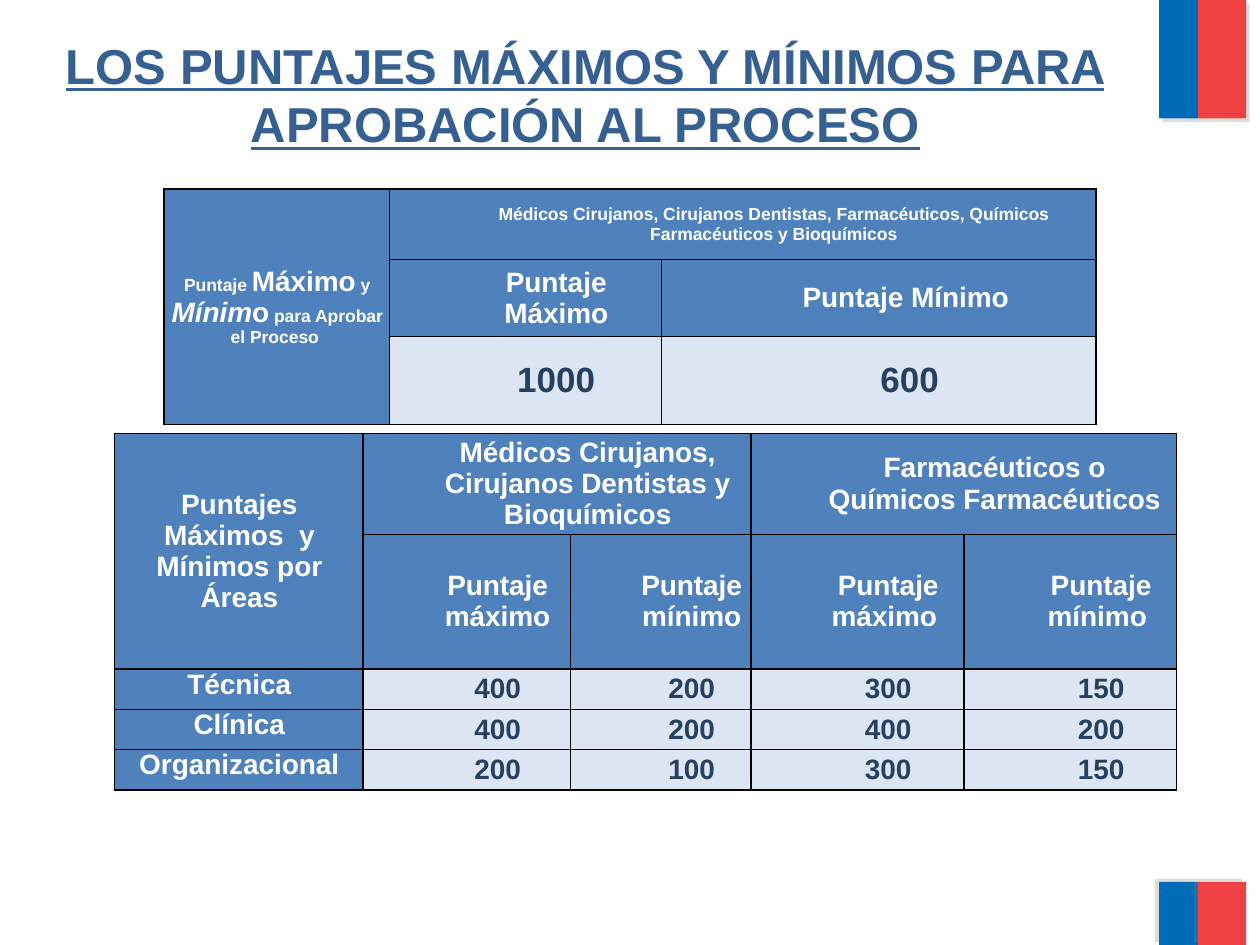
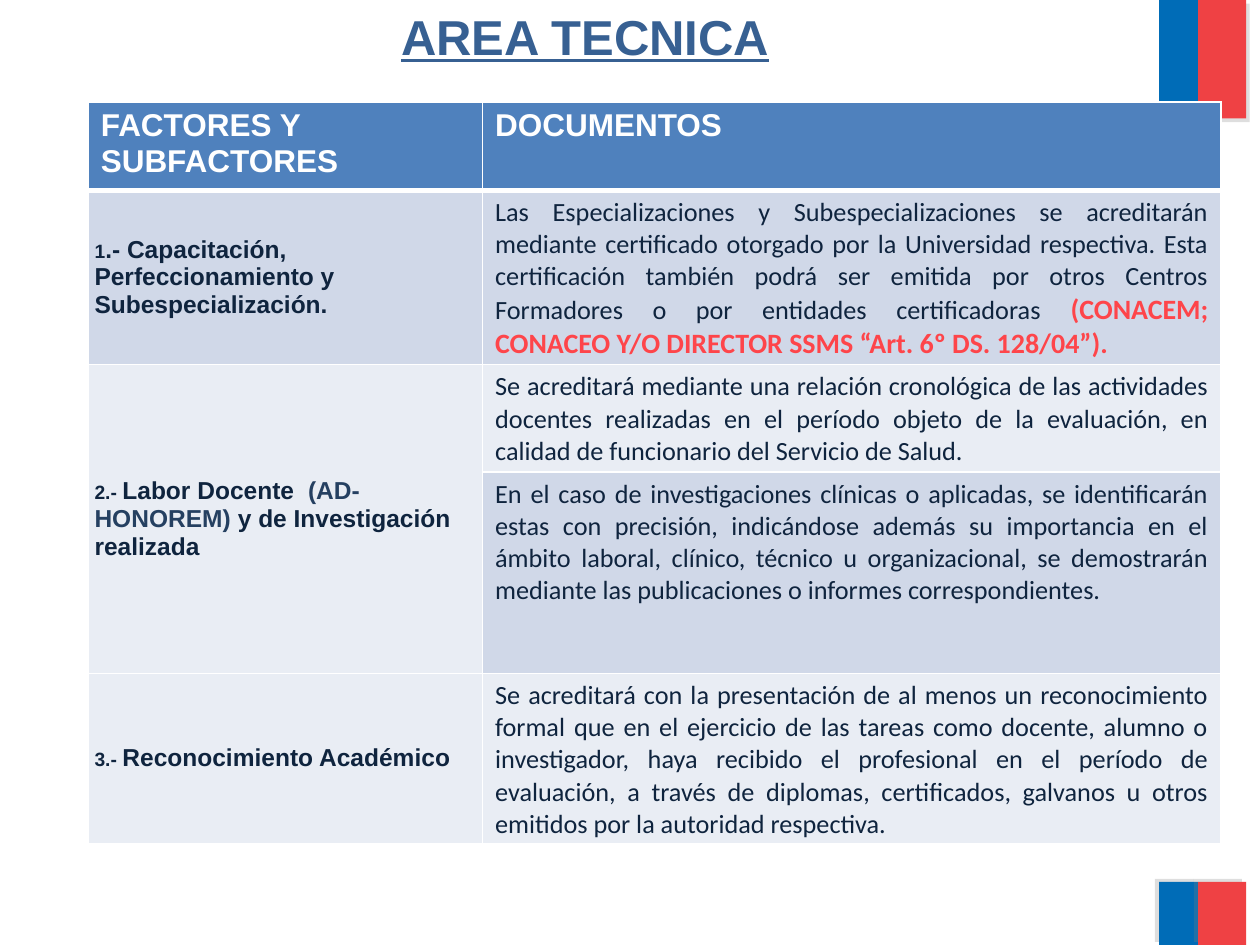
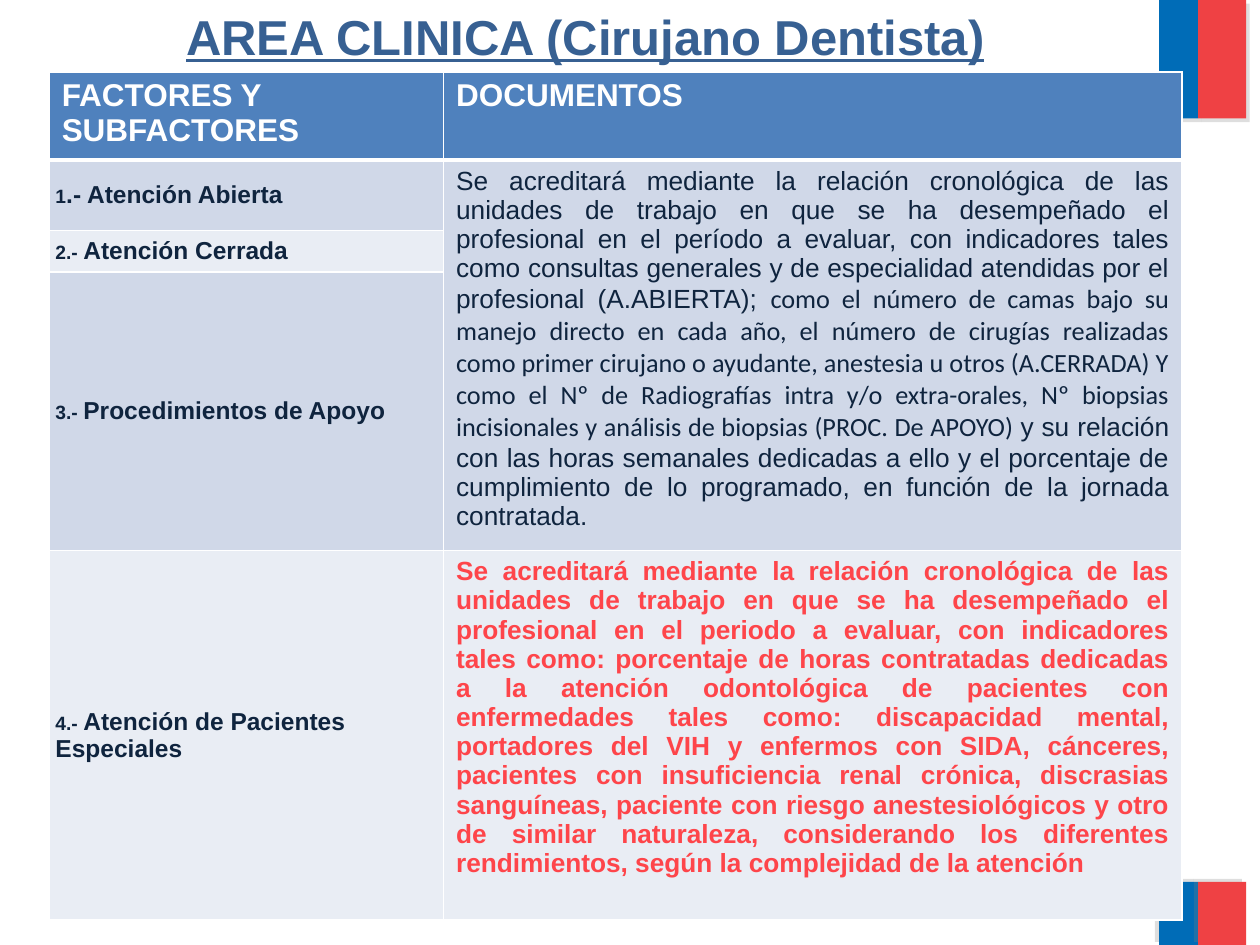
"""Build three slides on the scores and documents of an accreditation process."""
from lxml.etree import SubElement
from pptx import Presentation
from pptx.dml.color import RGBColor
from pptx.enum.shapes import MSO_SHAPE as Shape
from pptx.enum.text import MSO_ANCHOR as Anchor, MSO_AUTO_SIZE as AutoSize, PP_ALIGN as Align
from pptx.oxml.ns import qn
from pptx.util import Inches, Pt

BLUE, RED = "006CB7", "EF4144"
TITLE, HEADER, WHITE, BLACK = "376092", "4F81BD", "FFFFFF", "000000"
PALE, NAVY, INK, ALERT = "DCE6F2", "254061", "0F243E", "FE454A"
ROW_BANDS = ["E9EDF4", "D0D8E8"]

FLAG_BANDS = [
    (9.2, -0.01, 0.31, 0.95, BLUE, 45),
    (9.51, 0, 0.38, 0.94, RED, 45),
    (9.2, 7, 0.31, 0.5, BLUE, 215),
    (9.51, 7, 0.38, 0.5, RED, 215),
]

TIGHT = {"inset": (0.05, 0), "anchor": Anchor.MIDDLE}
SCORE = {**TIGHT, "align": Align.CENTER, "size": 16, "bold": True}
STYLES = {
    "group": {**SCORE, "fill": HEADER, "color": WHITE, "indent": 0.49},
    "corner": {**SCORE, "fill": HEADER, "color": WHITE, "indent": 0.01},
    "area": {**SCORE, "fill": HEADER, "color": WHITE, "indent": 0.01, "anchor": Anchor.TOP},
    "score": {**SCORE, "fill": PALE, "color": NAVY, "indent": 0.49},
    "heading": {"fill": HEADER, "color": WHITE, "size": 18, "bold": True},
    "factor": {**TIGHT, "color": INK, "size": 14, "bold": True},
    "document": {"color": INK, "size": 15, "align": Align.JUSTIFY},
}
SMALL, LARGE, NUMBER = {"size": 10}, {"size": 20}, {"size": 11}
CALIBRI = {"font": "Calibri"}

OVERALL = {
    "at": (1.3, 1.5), "cols": [1.79, 2.16, 3.45], "rows": [0.56, 0.61, 0.7],
    "cells": [
        (0, 0, "corner", [("Puntaje ", SMALL), "Máximo", (" y ", SMALL), ("Mínim", {"italic": True}),
                          "o", (" para Aprobar el Proceso ", SMALL)], (3, 1)),
        (0, 1, "group", [("Médicos Cirujanos, Cirujanos Dentistas, Farmacéuticos, Químicos "
                          "Farmacéuticos y Bioquímicos", SMALL)], (1, 2)),
        (1, 1, "group", ["Puntaje Máximo"]),
        (1, 2, "group", ["Puntaje Mínimo "]),
        (2, 1, "score", [("1000", LARGE)]),
        (2, 2, "score", [("600", LARGE)]),
    ],
}

AREA_SCORES = [
    ("Técnica", 400, 200, 300, 150),
    ("Clínica", 400, 200, 400, 200),
    ("Organizacional", 200, 100, 300, 150),
]
LIMITS = ["Puntaje máximo", "Puntaje mínimo", "Puntaje máximo ", "Puntaje mínimo "]
BY_AREA = {
    "at": (0.91, 3.44), "cols": [1.97, 1.65, 1.43, 1.69, 1.69], "rows": [0.8, 1.07] + [0.32] * 3,
    "cells": [
        (0, 0, "corner", ["Puntajes Máximos  y Mínimos por Áreas"], (2, 1)),
        (0, 1, "group", ["Médicos Cirujanos, Cirujanos Dentistas y Bioquímicos"], (1, 2)),
        (0, 3, "group", ["Farmacéuticos o Químicos Farmacéuticos"], (1, 2)),
        *((1, col, "group", [limit]) for col, limit in enumerate(LIMITS, 1)),
        *((row, col, "score" if col else "area", [str(entry)])
          for row, entries in enumerate(AREA_SCORES, 2) for col, entry in enumerate(entries)),
    ],
}

FACTOR_COLS = [3.13, 5.86]
FACTOR_HEADINGS = [
    (0, 0, "heading", ["FACTORES Y SUBFACTORES"]),
    (0, 1, "heading", ["DOCUMENTOS"]),
]
TECHNICAL = {
    "at": (0.7, 0.81), "cols": FACTOR_COLS, "rows": [0.69, 1.38, 0.85, 1.6, 1.35],
    "cells": FACTOR_HEADINGS + [
        (1, 0, "factor", [("1", NUMBER), ".- Capacitación, Perfeccionamiento y Subespecialización."]),
        (1, 1, "document", [
            ("Las Especializaciones y Subespecializaciones se acreditarán mediante certificado otorgado "
             "por la Universidad respectiva. Esta certificación también podrá ser emitida por otros "
             "Centros Formadores o por entidades certificadoras ", CALIBRI),
            ("(CONACEM; CONACEO Y/O DIRECTOR SSMS “Art. 6º DS. 128/04”).",
             {**CALIBRI, "size": 16, "color": ALERT, "bold": True})]),
        (2, 0, "factor", [("2.- ", NUMBER), "Labor Docente  ", ("(AD-HONOREM) ", {"color": NAVY}),
                          "y de Investigación realizada"], (2, 1)),
        (2, 1, "document", [
            ("Se acreditará mediante una relación cronológica de las actividades docentes realizadas en "
             "el período objeto de la evaluación, en calidad de funcionario del Servicio de Salud. ",
             CALIBRI)]),
        (3, 1, "document", [
            ("En el caso de investigaciones clínicas o aplicadas, se identificarán estas con precisión, "
             "indicándose además su importancia en el ámbito laboral, clínico, técnico u organizacional, "
             "se demostrarán mediante las publicaciones o informes correspondientes.", CALIBRI)]),
        (4, 0, "factor", [("3.- ", NUMBER), "Reconocimiento Académico"]),
        (4, 1, "document", [
            ("Se acreditará con la presentación de al menos un reconocimiento formal que en el ejercicio "
             "de las tareas como docente, alumno o investigador, haya recibido el profesional en el "
             "período de evaluación, a través de diplomas, certificados, galvanos u otros emitidos por "
             "la autoridad respectiva.", CALIBRI)]),
    ],
}
CLINICAL = {
    "at": (0.39, 0.57), "cols": FACTOR_COLS, "rows": [0.69, 0.56, 0.33, 2.21, 2.93],
    "cells": FACTOR_HEADINGS + [
        (1, 0, "factor", [("1", NUMBER), ".- Atención Abierta"]),
        (1, 1, "document", [
            "Se acreditará mediante la relación cronológica de las unidades de trabajo en que se ha "
            "desempeñado el profesional en el período a evaluar, con indicadores tales como consultas "
            "generales y de especialidad atendidas por el profesional (A.ABIERTA); ",
            ("como el número de camas bajo su manejo directo en cada año, el número de cirugías "
             "realizadas como primer cirujano o ayudante, anestesia u otros (A.CERRADA) Y como el Nº de "
             "Radiografías intra y/o extra-orales, Nº biopsias incisionales y análisis de biopsias "
             "(PROC. De APOYO) ", CALIBRI),
            "y su relación con las horas semanales dedicadas a ello y el porcentaje de cumplimiento de "
            "lo programado, en función de la jornada contratada."], (3, 1)),
        (2, 0, "factor", [("2.- ", NUMBER), "Atención Cerrada"]),
        (3, 0, "factor", [("3.- ", NUMBER), "Procedimientos de Apoyo"]),
        (4, 0, "factor", [("4.- ", NUMBER), "Atención de Pacientes Especiales"]),
        (4, 1, "document", [
            ("Se acreditará mediante la relación cronológica de las unidades de trabajo en que se ha "
             "desempeñado el profesional en el periodo a evaluar, con indicadores tales como: porcentaje "
             "de horas contratadas dedicadas a la atención odontológica de pacientes con enfermedades "
             "tales como: discapacidad mental, portadores del VIH y enfermos con SIDA, cánceres, "
             "pacientes con insuficiencia renal crónica, discrasias sanguíneas, paciente con riesgo "
             "anestesiológicos y otro de similar naturaleza, considerando los diferentes rendimientos, "
             "según la complejidad de la atención", {"color": ALERT, "bold": True})]),
    ],
}

SLIDES = [
    ("LOS PUNTAJES MÁXIMOS Y MÍNIMOS PARA APROBACIÓN AL PROCESO", (0.23, 1.04), BLACK,
     [OVERALL, BY_AREA]),
    ("AREA TECNICA", (0, 0.57), WHITE, [TECHNICAL]),
    ("AREA CLINICA (Cirujano Dentista)", (0, 0.57), WHITE, [CLINICAL]),
]


def rgb(value):
    return RGBColor.from_string(value)


def paint(fill, color):
    fill.solid()
    fill.fore_color.rgb = rgb(color)


def add_run(paragraph, text, style):
    run = paragraph.add_run()
    run.text = text
    font = run.font
    font.name = style.get("font", "Arial")
    font.size = Pt(style["size"])
    font.bold = style.get("bold", False)
    font.italic = style.get("italic", False)
    font.underline = style.get("underline", False)
    font.color.rgb = rgb(style["color"])


def add_flag_band(slide, left, top, width, height, color, angle):
    band = slide.shapes.add_shape(Shape.RECTANGLE, *map(Inches, (left, top, width, height)))
    paint(band.fill, color)
    band.line.fill.background()
    band.shadow.inherit = False
    effects = band.element.spPr.find(qn("a:effectLst"))
    shadow = SubElement(effects, qn("a:outerShdw"), blurRad="0", dist=str(Pt(3)),
                        dir=str(angle * 60000), algn="ctr", rotWithShape="0")
    tone = SubElement(shadow, qn("a:srgbClr"), val="808080")
    SubElement(tone, qn("a:alpha"), val="25000")


def add_title(slide, text, top, height):
    frame = slide.shapes.add_textbox(*map(Inches, (0.23, top, 8.83, height))).text_frame
    frame.word_wrap = True
    frame.auto_size = AutoSize.SHAPE_TO_FIT_TEXT
    paragraph = frame.paragraphs[0]
    paragraph.alignment = Align.CENTER
    add_run(paragraph, text, {"size": 28, "color": TITLE, "bold": True, "underline": True})


def set_borders(cell, color, bottom):
    properties = cell._tc.get_or_add_tcPr()
    for side, width in (("L", 1), ("R", 1), ("T", 1), ("B", bottom)):
        line = SubElement(properties, qn(f"a:ln{side}"), w=str(Pt(width)))
        SubElement(SubElement(line, qn("a:solidFill")), qn("a:srgbClr"), val=color)


def fill_cell(cell, style, runs):
    across, down = style.get("inset", (0.1, 0.05))
    cell.margin_left = cell.margin_right = Inches(across)
    cell.margin_top = cell.margin_bottom = Inches(down)
    cell.vertical_anchor = style.get("anchor", Anchor.TOP)
    paragraph = cell.text_frame.paragraphs[0]
    paragraph.alignment = style.get("align", Align.LEFT)
    if "indent" in style:
        properties = paragraph._p.get_or_add_pPr()
        properties.set("marL", str(Inches(style["indent"])))
        properties.set("indent", "0")
    for run in runs:
        text, changes = (run, {}) if isinstance(run, str) else run
        add_run(paragraph, text, {**style, **changes})


def add_grid(slide, content, border):
    cols, rows = content["cols"], content["rows"]
    place = (*content["at"], sum(cols), sum(rows))
    table = slide.shapes.add_table(len(rows), len(cols), *map(Inches, place)).table
    for column, width in zip(table.columns, cols):
        column.width = Inches(width)
    for row, height in zip(table.rows, rows):
        row.height = Inches(height)
    styles = {(row, col): STYLES[name] for row, col, name, *_ in content["cells"]}
    for row in range(len(rows)):
        for col in range(len(cols)):
            style = styles.get((row, col), {})
            cell = table.cell(row, col)
            set_borders(cell, border, 3 if style is STYLES["heading"] else 1)
            paint(cell.fill, style.get("fill", ROW_BANDS[row % 2]))
    for row, col, name, runs, *span in content["cells"]:
        cell = table.cell(row, col)
        for high, wide in span:
            cell.merge(table.cell(row + high - 1, col + wide - 1))
        fill_cell(cell, STYLES[name], runs)


def main():
    deck = Presentation()
    deck.slide_width, deck.slide_height = Inches(10), Inches(7.5)
    for title, title_place, border, grids in SLIDES:
        slide = deck.slides.add_slide(deck.slide_layouts[6])
        for band in FLAG_BANDS:
            add_flag_band(slide, *band)
        add_title(slide, title, *title_place)
        for grid in grids:
            add_grid(slide, grid, border)
    deck.save("out.pptx")


if __name__ == "__main__":
    main()
